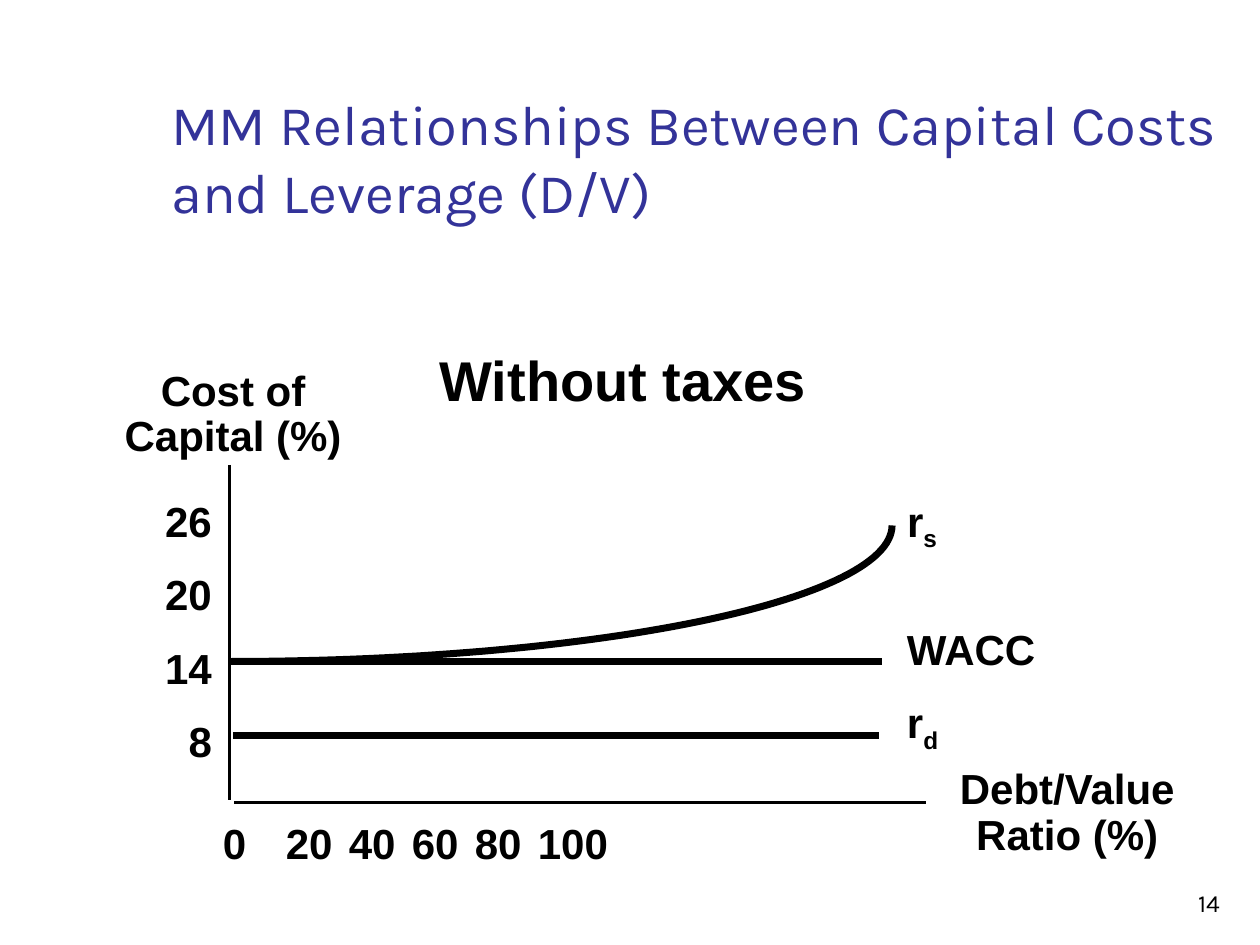
from math import cos, pi, sin

from lxml.etree import SubElement
from pptx import Presentation
from pptx.dml.color import RGBColor
from pptx.enum.shapes import MSO_CONNECTOR as Connector
from pptx.enum.text import MSO_ANCHOR as Anchor, MSO_AUTO_SIZE as AutoSize, PP_ALIGN as Align
from pptx.oxml.ns import qn
from pptx.util import Inches, Pt

COLORS = {"ink": "000000", "title": "333399"}
TITLE_ONLY = 5


class CostSlide:
    chart_font = "Arial"
    text_font = "Karla"

    def __init__(self, deck):
        self.page = deck.slides.add_slide(deck.slide_layouts[TITLE_ONLY])

    def add_span(self, para, text, size, font, color="ink", bold=False, subscript=False):
        span = para.add_run()
        span.text = text
        span.font.size = Pt(size)
        span.font.name = font
        span.font.bold = bold
        span.font.color.rgb = RGBColor.from_string(COLORS[color])
        if subscript:
            span.font._element.set("baseline", "-25000")

    def title(self, text, left, top, width, height):
        box = self.page.shapes.title
        box.left, box.top = Inches(left), Inches(top)
        box.width, box.height = Inches(width), Inches(height)
        frame = box.text_frame
        frame.auto_size = AutoSize.NONE
        frame.vertical_anchor = Anchor.BOTTOM
        para = frame.paragraphs[0]
        para.alignment = Align.LEFT
        self.add_span(para, text, 32, self.text_font, "title")

    def label(self, lines, left, top, width, height, size=24, align=Align.LEFT,
              font=chart_font, bold=True, wrap=True, anchor=Anchor.TOP,
              line_spacing=None, gap=0, subscript=None):
        """Add a text box with one paragraph per line and an optional subscript."""
        box = self.page.shapes.add_textbox(Inches(left), Inches(top), Inches(width), Inches(height))
        frame = box.text_frame
        frame.word_wrap = wrap
        frame.vertical_anchor = anchor
        for index, line in enumerate(lines):
            para = frame.add_paragraph() if index else frame.paragraphs[0]
            para.alignment = align
            para.line_spacing = line_spacing
            if index:
                para.space_before = Pt(gap)
            self.add_span(para, line, size, font, bold=bold)
        if subscript:
            self.add_span(para, subscript, size, font, bold=bold, subscript=True)

    def line(self, x1, y1, x2, y2, width):
        connector = self.page.shapes.add_connector(
            Connector.STRAIGHT, Inches(x1), Inches(y1), Inches(x2), Inches(y2))
        connector.line.width = Pt(width)
        connector.line.color.rgb = RGBColor.from_string(COLORS["ink"])
        SubElement(connector._element.spPr, qn("a:effectLst"))

    def rising_arc(self, left, top, width, height, line_width, steps=60):
        """Draw a quarter ellipse from bottom left to top right."""
        angles = [pi / 2 * step / steps for step in range(steps + 1)]
        points = [(Inches(left + width * sin(angle)), Inches(top + height * cos(angle)))
                  for angle in angles]
        builder = self.page.shapes.build_freeform(*points[0])
        builder.add_line_segments(points[1:], close=False)
        curve = builder.convert_to_shape()
        curve.shadow.inherit = False
        curve.fill.background()
        curve.line.width = Pt(line_width)
        curve.line.color.rgb = RGBColor.from_string(COLORS["ink"])


def main():
    deck = Presentation()
    deck.slide_width, deck.slide_height = Inches(10), Inches(7.5)
    slide = CostSlide(deck)

    slide.title("MM Relationships Between Capital Costs and Leverage (D/V)", 1.26, 0.23, 8.52, 1.6)
    slide.label(["14"], 7.7, 6.83, 2.08, 0.5, size=14, align=Align.RIGHT,
                font=slide.text_font, bold=False, anchor=Anchor.BOTTOM)

    # Axes with their titles and tick labels
    slide.line(1.82, 3.69, 1.82, 6.35, 2)
    slide.line(1.86, 6.37, 7.35, 6.37, 2)
    slide.label(["Without taxes"], 3.39, 2.69, 3.12, 0.64, size=32, wrap=False)
    for text, left, top in (("Cost of Capital (%)", 0.83, 2.89),
                            ("Debt/Value Ratio (%)", 7.45, 6.05)):
        slide.label([text], left, top, 2.04, 0.83, align=Align.CENTER, line_spacing=0.9)
    slide.label(["26", "20", "14", "8"], 1.08, 3.88, 0.7, 2.31, align=Align.RIGHT, gap=13.2)
    slide.label(["\t".join(str(tick) for tick in range(0, 101, 20))], 1.67, 6.44, 7.99, 0.51)

    # Cost curves and their names
    slide.line(1.85, 5.84, 6.98, 5.84, 4)
    slide.line(1.87, 5.25, 7, 5.25, 4)
    slide.rising_arc(1.83, 4.17, 5.25, 1.08, 4)
    for text, subscript, top, width in (("r", "s", 3.88, 0.45),
                                        ("WACC", None, 4.9, 1.24),
                                        ("r", "d", 5.48, 0.46)):
        slide.label([text], 7.1, top, width, 0.5, wrap=False, subscript=subscript)

    deck.save("out.pptx")


if __name__ == "__main__":
    main()
